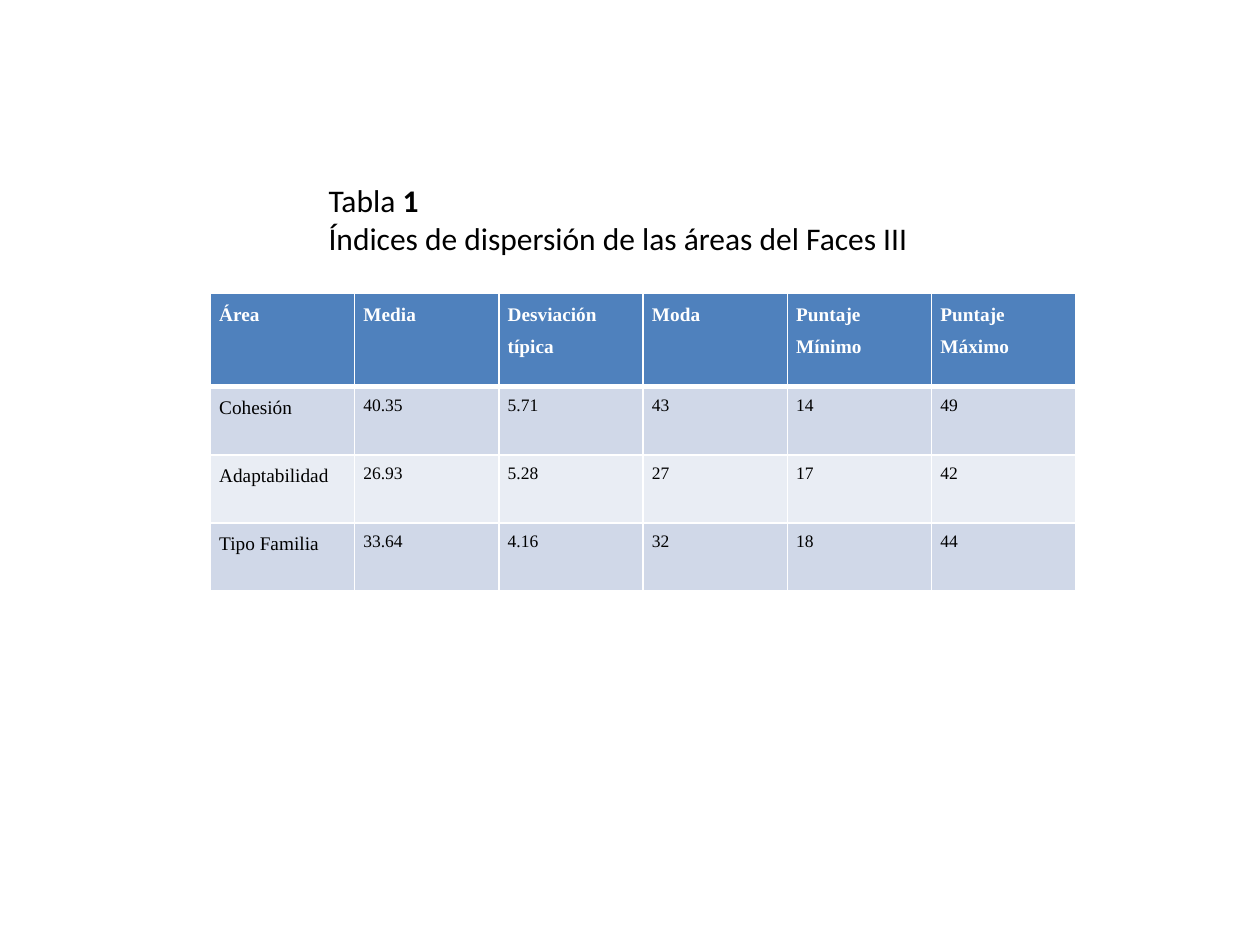
from lxml import etree
from pptx import Presentation
from pptx.dml.color import RGBColor
from pptx.enum.text import MSO_AUTO_SIZE
from pptx.oxml.ns import qn
from pptx.util import Inches, Pt

FIT_SHAPE = MSO_AUTO_SIZE.SHAPE_TO_FIT_TEXT
BLACK, WHITE = "000000", "FFFFFF"
HEADER_FILL = "4F81BD"
BAND_FILLS = ("D0D8E8", "E9EDF4")
ROWS = [
    ["Área", "Media", "Desviación típica", "Moda", "Puntaje Mínimo", "Puntaje\nMáximo"],
    ["Cohesión", "40.35", "5.71", "43", "14", "49"],
    ["Adaptabilidad", "26.93", "5.28", "27", "17", "42"],
    ["Tipo Familia", "33.64", "4.16", "32", "18", "44"],
]


def color(hex_value):
    return RGBColor.from_string(hex_value)


def format_run(run, font_name, size, hex_value, bold=False):
    run.font.name = font_name
    run.font.size = Pt(size)
    run.font.color.rgb = color(hex_value)
    run.font.bold = bold


def add_border(cell, side, width):
    line = etree.SubElement(cell._tc.get_or_add_tcPr(), qn(f"a:ln{side}"), w=str(Pt(width)))
    fill = etree.SubElement(line, qn("a:solidFill"))
    etree.SubElement(fill, qn("a:srgbClr"), val=WHITE)


def add_caption(slide, left, top, width, height):
    text_frame = slide.shapes.add_textbox(left, top, width, height).text_frame
    text_frame.word_wrap = True
    text_frame.auto_size = FIT_SHAPE
    text_frame.text = "Tabla \nÍndices de dispersión de las áreas del Faces III"
    text_frame.paragraphs[0].add_run().text = "1"
    for paragraph in text_frame.paragraphs:
        for run in paragraph.runs:
            format_run(run, "Calibri", 18, BLACK, bold=run.text == "1")


def format_cell(cell, text, row, column):
    is_header = row == 0
    cell.margin_left = cell.margin_right = Inches(0.07)
    cell.margin_top = cell.margin_bottom = 0
    cell.text = text
    for paragraph in cell.text_frame.paragraphs:
        paragraph.line_spacing = 1.5
        for run in paragraph.runs:
            format_run(run, "Times New Roman", 11 if is_header or column == 0 else 10,
                       WHITE if is_header else BLACK, bold=is_header)
    widths = {"L": 1, "R": 1, "T": 3 if row == 1 else 1, "B": 3 if is_header else 1}
    for side, width in widths.items():
        add_border(cell, side, width)
    cell.fill.solid()
    cell.fill.fore_color.rgb = color(HEADER_FILL if is_header else BAND_FILLS[(row - 1) % 2])


def add_dispersion_table(slide, left, top, width, height):
    table = slide.shapes.add_table(len(ROWS), len(ROWS[0]), left, top, width, height).table
    header_height = Inches(0.74)
    for column in table.columns:
        column.width = width // len(ROWS[0])
    for row, values in enumerate(ROWS):
        table.rows[row].height = (
            header_height if row == 0 else (height - header_height) // (len(ROWS) - 1))
        for column, text in enumerate(values):
            format_cell(table.cell(row, column), text, row, column)


def main():
    presentation = Presentation()
    presentation.slide_width, presentation.slide_height = Inches(10), Inches(7.5)
    slide = presentation.slides.add_slide(presentation.slide_layouts[6])
    add_dispersion_table(slide, Inches(1.67), Inches(2.33), Inches(6.87), Inches(2.36))
    add_caption(slide, Inches(2.51), Inches(1.39), Inches(5), Inches(0.71))
    presentation.save("out.pptx")


if __name__ == "__main__":
    main()
